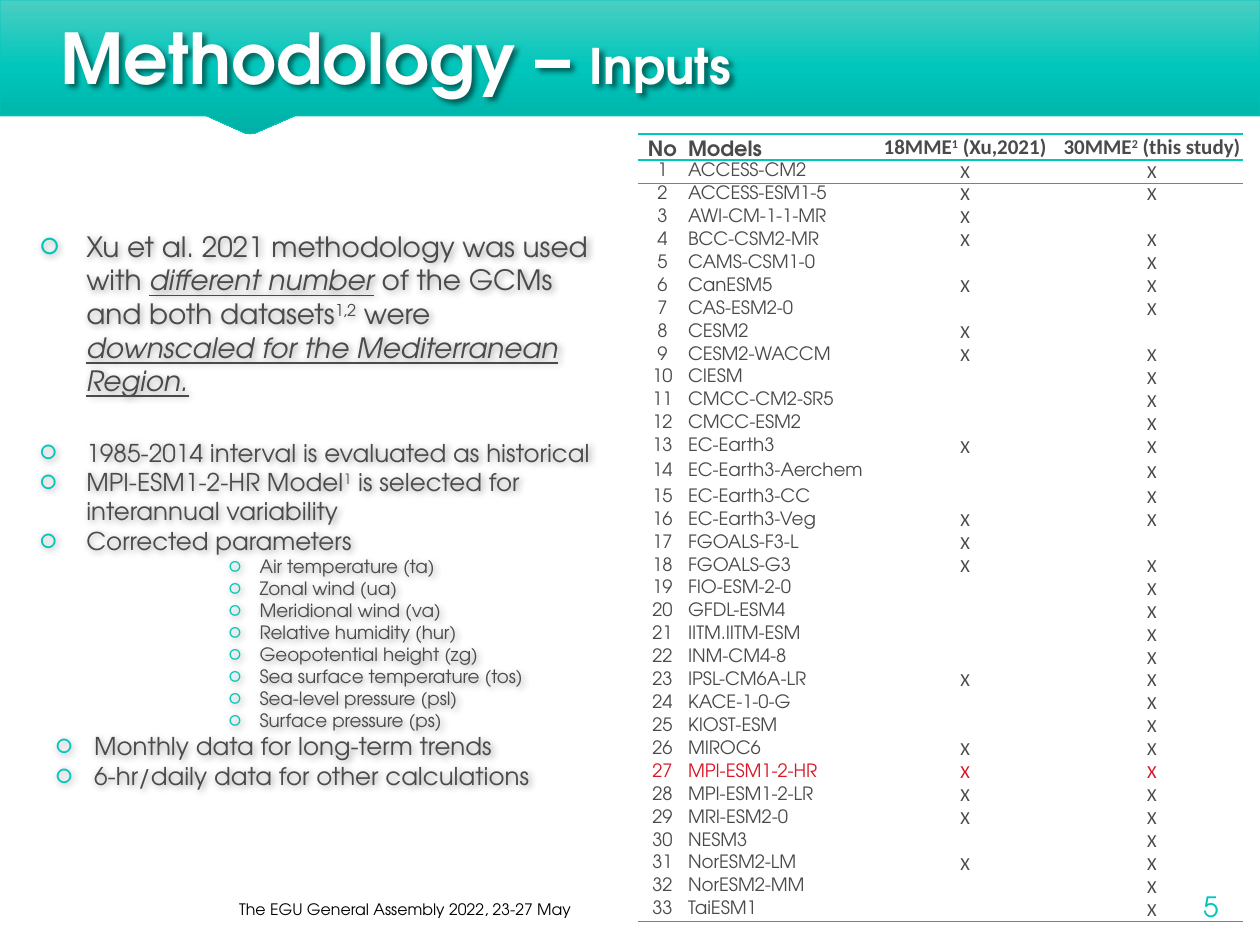
from copy import deepcopy
from dataclasses import dataclass

from pptx import Presentation
from pptx.dml.color import RGBColor
from pptx.enum.text import MSO_ANCHOR as Anchor, MSO_AUTO_SIZE as AutoSize, PP_ALIGN as Align
from pptx.oxml import parse_xml
from pptx.oxml.ns import nsdecls, qn
from pptx.util import Pt


@dataclass(frozen=True)
class Theme:
    font: str = "TeX Gyre Adventor"
    mark_font: str = "Calibri"
    teal: str = "00C6BB"
    band: tuple = ("4BCEC3", "00C6BB", "00B0A6")
    text: str = "4A4A4A"
    white: str = "FEFEFE"
    black: str = "000000"
    red: str = "D81624"
    rule: str = "7F7F7F"
    title: float = 40
    subtitle: float = 28
    lead: float = 16
    body: float = 14
    head: float = 12
    small: float = 10.5
    footer: float = 9


THEME = Theme()
NO_STYLE = "{2D5ABB26-0587-4C30-8999-92F81FD0307C}"

MODELS = """ACCESS-CM2 ACCESS-ESM1-5 AWI-CM-1-1-MR BCC-CSM2-MR CAMS-CSM1-0 CanESM5
CAS-ESM2-0 CESM2 CESM2-WACCM CIESM CMCC-CM2-SR5 CMCC-ESM2 EC-Earth3
EC-Earth3-Aerchem EC-Earth3-CC EC-Earth3-Veg FGOALS-F3-L FGOALS-G3 FIO-ESM-2-0
GFDL-ESM4 IITM.IITM-ESM INM-CM4-8 IPSL-CM6A-LR KACE-1-0-G KIOST-ESM MIROC6
MPI-ESM1-2-HR MPI-ESM1-2-LR MRI-ESM2-0 NESM3 NorESM2-LM NorESM2-MM TaiESM1""".split()
IN_18MME = {1, 2, 3, 4, 6, 8, 9, 13, 16, 17, 18, 23, 26, 27, 28, 29, 31}
NOT_IN_30MME = {3, 8, 17}
SELECTED, TALL_ROW = 27, 14

# Each span is (text, style): "" plain, "u" underlined italic, "^" superscript
LEAD = [("Xu et al. 2021 methodology was used with ", ""), ("different number", "u"),
        (" of the GCMs and both datasets", ""), ("1,2", "^"), (" were ", ""),
        ("downscaled for the Mediterranean Region.", "u")]
POINTS = [[("1985-2014 interval is evaluated as historical", "")],
          [("MPI-ESM1-2-HR Model", ""), ("1", "^"),
           (" is selected for interannual variability", "")],
          [("Corrected parameters", "")]]
PARAMETERS = ["Air temperature (ta)", "Zonal wind (ua)", "Meridional wind (va)",
              "Relative humidity (hur)", "Geopotential height (zg)",
              "Sea surface temperature (tos)", "Sea-level pressure (psl)",
              "Surface pressure (ps)"]
DATA_USE = ["Monthly data for long-term trends", "6-hr/daily data for other calculations"]


def write_spans(para, spans, size, color=THEME.text, font=THEME.font, bold=False):
    for text, style in spans:
        span = para.add_run()
        span.text = text
        span.font.size, span.font.name, span.font.bold = Pt(size), font, bold
        span.font.color.rgb = RGBColor.from_string(color)
        if style == "u":
            span.font.italic = span.font.underline = True
        elif style == "^":
            span.font._element.set("baseline", "30000")


def place(shape, left, top, width, height):
    shape.left, shape.top, shape.width, shape.height = map(Pt, (left, top, width, height))


def set_frame(shape, anchor):
    frame = shape.text_frame
    frame.word_wrap, frame.auto_size = True, AutoSize.NONE
    frame.vertical_anchor = anchor
    return frame


def add_soft_shadow(shape, blur, distance, opacity):
    shape._element.spPr.append(parse_xml(
        f'<a:effectLst {nsdecls("a")}><a:outerShdw blurRad="{Pt(blur)}" dist="{Pt(distance)}" '
        f'dir="2700000" algn="tl" rotWithShape="0"><a:srgbClr val="000000">'
        f'<a:alpha val="{opacity * 1000}"/></a:srgbClr></a:outerShdw></a:effectLst>'))


def add_banner(page):
    builder = page.shapes.build_freeform(0, 0)
    outline = [(720, 0), (720, 66.2), (168.5, 66.2), (146, 76), (143, 76.5),
               (140, 76), (118, 66.2), (0, 66.2)]
    builder.add_line_segments([(Pt(x), Pt(y)) for x, y in outline])
    banner = builder.convert_to_shape()
    banner.shadow.inherit = False
    banner.line.color.rgb = RGBColor.from_string(THEME.teal)
    banner.line.width = Pt(0.5)
    banner.fill.gradient()
    banner.fill.gradient_angle = 270
    stops = banner._element.spPr.find(qn("a:gradFill")).find(qn("a:gsLst"))
    stops.append(deepcopy(stops[-1]))
    for index, (stop, color) in enumerate(zip(banner.fill.gradient_stops, THEME.band)):
        stop.position = index / 2
        stop.color.rgb = RGBColor.from_string(color)


def fill_title(title):
    place(title, 27.4, 0, 624, 59.8)
    para = set_frame(title, Anchor.BOTTOM).paragraphs[0]
    para.alignment = Align.LEFT
    write_spans(para, [("Methodology – ", "")], THEME.title, THEME.white, bold=True)
    write_spans(para, [("Inputs", "")], THEME.subtitle, THEME.white, bold=True)
    add_soft_shadow(title, 3, 2, 50)


def add_bullet(para, spans, size, indent=27, hang=27, level=0, after=0):
    para.level = level
    para.space_before, para.space_after, para.line_spacing = Pt(0), Pt(after), 1.0
    props = para._p.get_or_add_pPr()
    props.set("marL", str(Pt(indent)))
    props.set("indent", str(-Pt(hang)))
    for xml in (f'<a:buClr {nsdecls("a")}><a:srgbClr val="{THEME.teal}"/></a:buClr>',
                f'<a:buFont {nsdecls("a")} typeface="{THEME.font}"/>',
                f'<a:buChar {nsdecls("a")} char="○"/>'):
        props.append(parse_xml(xml))
    write_spans(para, spans, size)


def fill_body(body):
    place(body, 15.1, 103, 334.8, 376.6)
    frame = set_frame(body, Anchor.MIDDLE)
    add_bullet(frame.paragraphs[0], LEAD, THEME.lead, after=23)
    for spans in POINTS:
        add_bullet(frame.add_paragraph(), spans, THEME.body)
    for text in PARAMETERS:
        add_bullet(frame.add_paragraph(), [(text, "")], THEME.small, 126, 18, level=3)
    for text in DATA_USE:
        add_bullet(frame.add_paragraph(), [(text, "")], THEME.body, 31.5, 22.5)
    add_soft_shadow(body, 4, 2, 40)


def add_label(page, text, bounds, size, color, align):
    box = page.shapes.add_textbox(*map(Pt, bounds))
    frame = set_frame(box, Anchor.BOTTOM)
    frame.paragraphs[0].alignment = align
    write_spans(frame.paragraphs[0], [(text, "")], size, color)
    return frame


def add_border(cell, side, color, width):
    borders = cell._tc.get_or_add_tcPr()
    line = parse_xml(f'<a:ln{side} {nsdecls("a")} w="{Pt(width)}"><a:solidFill>'
                     f'<a:srgbClr val="{color}"/></a:solidFill></a:ln{side}>')
    borders.insert(len(borders.findall(qn("a:lnT"))), line)


def fill_cell(cell, spans, size, color, font, centred, anchor, bold=False):
    cell.fill.background()
    cell.margin_left = cell.margin_right = Pt(0.7)
    cell.margin_top, cell.margin_bottom = Pt(0.3), 0
    cell.vertical_anchor = anchor
    para = cell.text_frame.paragraphs[0]
    para.alignment = Align.CENTER if centred else Align.LEFT
    write_spans(para, spans, size, color, font, bold)
    if not spans:  # keeps an unmarked cell as low as its row
        para._p.append(parse_xml(f'<a:endParaRPr {nsdecls("a")} sz="{int(size * 100)}"/>'))


def add_model_table(page):
    count = len(MODELS)
    frame = page.shapes.add_table(count + 1, 4, Pt(364.5), Pt(76.5), Pt(346), Pt(451))
    table = frame.table
    table.first_row = table.horz_banding = False
    table._tbl.tblPr.find(qn("a:tableStyleId")).text = NO_STYLE
    for column, width in zip(table.columns, (28, 104.4, 109.2, 104.4)):
        column.width = Pt(width)
    for number, row in enumerate(table.rows):
        row.height = Pt(14.9 if number == 0 else 15.8 if number == TALL_ROW else 13.1)

    # Header row
    heads = [[("No", "")], [("Models", "")],
             [("18MME", ""), ("1", "^"), (" (Xu,2021)", "")],
             [("30MME", ""), ("2", "^"), (" (this study)", "")]]
    fonts = (THEME.font, THEME.font, THEME.mark_font, THEME.mark_font)
    for column, spans in enumerate(heads):
        fill_cell(table.cell(0, column), spans, THEME.head, THEME.text, fonts[column],
                  column != 1, Anchor.BOTTOM, bold=True)

    # Model rows
    for number, model in enumerate(MODELS, 1):
        color = THEME.red if number == SELECTED else THEME.text
        values = (str(number), model, "X" if number in IN_18MME else "",
                  "" if number in NOT_IN_30MME else "X")
        for column, value in enumerate(values):
            fill_cell(table.cell(number, column), [(value, "")] if value else [],
                      THEME.small, color, fonts[column], column != 1, Anchor.MIDDLE)

    # Horizontal rules
    rules = [(0, "T", THEME.teal, 1), (0, "B", THEME.teal, 1), (1, "T", THEME.teal, 1),
             (1, "B", THEME.rule, 0.5), (count, "B", THEME.rule, 0.5)]
    for row, side, color, width in rules:
        for column in range(4):
            add_border(table.cell(row, column), side, color, width)


def main():
    deck = Presentation()
    deck.slide_width, deck.slide_height = Pt(720), Pt(540)
    page = deck.slides.add_slide(deck.slide_layouts[1])
    add_banner(page)
    # Bring the placeholders in front of the banner
    title, body = page.shapes.title, page.placeholders[1]
    for holder in (body, title):
        page.shapes._spTree.append(holder._element)
    fill_title(title)
    fill_body(body)
    add_label(page, "The EGU General Assembly 2022, 23-27 May", (129.6, 499.7, 363, 28.8),
              THEME.footer, THEME.black, Align.LEFT)
    number = add_label(page, "5", (640.8, 489.6, 62.6, 38.9), THEME.lead, THEME.teal, Align.RIGHT)
    number.margin_bottom = Pt(0.7)
    add_model_table(page)
    deck.save("out.pptx")


if __name__ == "__main__":
    main()
